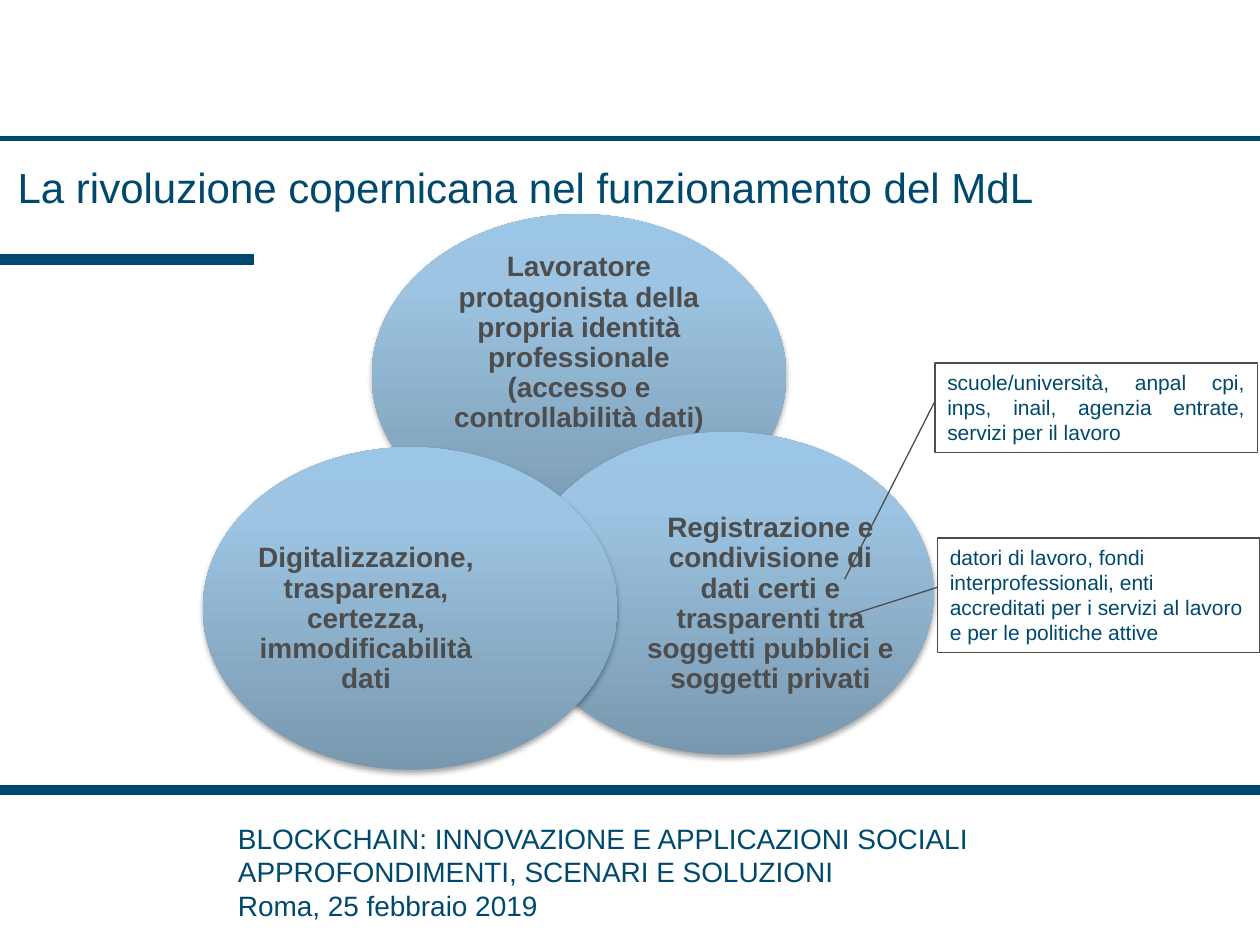
from dataclasses import dataclass

from lxml.etree import SubElement
from pptx import Presentation
from pptx.dml.color import RGBColor
from pptx.enum.shapes import MSO_CONNECTOR, MSO_SHAPE
from pptx.enum.text import MSO_ANCHOR as ANCHOR, MSO_AUTO_SIZE as AUTO_SIZE, PP_ALIGN as ALIGN
from pptx.oxml import parse_xml
from pptx.oxml.ns import nsdecls, qn
from pptx.util import Inches, Pt


@dataclass(frozen=True)
class Theme:
    font: str = "Arial"
    primary: str = "00496E"
    dark: str = "4D4D4D"
    gradient: tuple = ((0, "7998AF"), (80, "9DC5E3"), (100, "9CC6E6"))
    title_size: int = 24
    body_size: int = 16
    note_size: int = 12


THEME = Theme()
COLUMNS, ROWS = 100, 75
CELL = Inches(10) // COLUMNS
CIRCLE_SIZE = (32.9, 25.6)

CIRCLES = [
    ((29.5, 17), (33.9, 21.5, 24.1, 11.5),
     "Lavoratore protagonista della propria identità professionale "
     "(accesso e controllabilità dati)"),
    ((41.2, 34.3), (51.3, 40.9, 19.7, 14.1),
     "Registrazione e condivisione di dati certi e trasparenti tra "
     "soggetti pubblici e soggetti privati"),
    ((16.1, 35.5), (19.2, 42.1, 19.7, 14.1),
     "Digitalizzazione, trasparenza, certezza, immodificabilità dati"),
]
CALLOUTS = [
    ((74.2, 28.8, 25.6, 7.1), 2.42, ALIGN.JUSTIFY,
     "scuole/università, anpal cpi, inps, inail, agenzia entrate, servizi per il lavoro"),
    ((74.4, 42.7, 25.6, 9.1), 0.68, ALIGN.LEFT,
     "datori di lavoro, fondi interprofessionali, enti accreditati per i servizi "
     "al lavoro e per le politiche attive"),
]
FOOTER = [
    "BLOCKCHAIN: INNOVAZIONE E APPLICAZIONI SOCIALI",
    "APPROFONDIMENTI, SCENARI E SOLUZIONI",
    "Roma, 25 febbraio 2019",
]


def grid(*cells):
    return [round(cell * CELL) for cell in cells]


def color(value):
    return RGBColor.from_string(value)


def write(shape, *lines, size=THEME.body_size, ink=THEME.primary, bold=False,
          align=ALIGN.LEFT, anchor=ANCHOR.TOP, spacing=None, margin=None):
    frame = shape.text_frame
    frame.word_wrap = True
    frame.auto_size = AUTO_SIZE.NONE
    frame.vertical_anchor = anchor
    if margin is not None:
        frame.margin_left = frame.margin_right = margin
        frame.margin_top = frame.margin_bottom = margin
    for index, line in enumerate(lines):
        paragraph = frame.add_paragraph() if index else frame.paragraphs[0]
        paragraph.alignment = align
        paragraph.line_spacing = spacing
        run = paragraph.add_run()
        run.text = line
        run.font.name = THEME.font
        run.font.size = Pt(size)
        run.font.bold = bold
        run.font.color.rgb = color(ink)


def add_rule(slide, row, width):
    rule = slide.shapes.add_connector(
        MSO_CONNECTOR.STRAIGHT, *grid(0, row, COLUMNS, row))
    rule.line.color.rgb = color(THEME.primary)
    rule.line.width = Pt(width)
    SubElement(rule.element.spPr, qn("a:effectLst"))


def add_accent(slide, *box):
    accent = slide.shapes.add_shape(MSO_SHAPE.RECTANGLE, *grid(*box))
    accent.shadow.inherit = False
    accent.fill.solid()
    accent.fill.fore_color.rgb = accent.line.color.rgb = color(THEME.primary)
    accent.line.width = Pt(0.75)


def shade(shape):
    shape.line.fill.background()
    stops = "".join(
        f'<a:gs pos="{position * 1000}"><a:srgbClr val="{value}"/></a:gs>'
        for position, value in THEME.gradient)
    gradient = parse_xml(
        f'<a:gradFill {nsdecls("a")} rotWithShape="1"><a:gsLst>{stops}</a:gsLst>'
        '<a:lin ang="16200000" scaled="0"/></a:gradFill>')
    shadow = parse_xml(
        f'<a:effectLst {nsdecls("a")}><a:outerShdw blurRad="{Pt(3.1)}" dist="{Pt(1.8)}" '
        'dir="5400000" rotWithShape="0"><a:srgbClr val="000000"><a:alpha val="35000"/>'
        '</a:srgbClr></a:outerShdw></a:effectLst>')
    properties = shape.element.spPr
    properties.find(qn("a:prstGeom")).addnext(gradient)
    properties.append(shadow)


def add_circle(group, corner, label_box, text):
    circle = group.shapes.add_shape(MSO_SHAPE.OVAL, *grid(*corner, *CIRCLE_SIZE))
    shade(circle)
    label = group.shapes.add_textbox(*grid(*label_box))
    write(label, text, ink=THEME.dark, bold=True, align=ALIGN.CENTER,
          anchor=ANCHOR.MIDDLE, spacing=0.9, margin=0)


def add_callout(slide, box, tip, align, text):
    callout = slide.shapes.add_shape(MSO_SHAPE.LINE_CALLOUT_1, *grid(*box))
    callout.shadow.inherit = False
    callout.fill.background()
    callout.line.color.rgb = color(THEME.dark)
    callout.line.width = Pt(0.75)
    for index, share in enumerate((0.43, 0, tip, -0.28)):
        callout.adjustments[index] = share
    write(callout, text, size=THEME.note_size, align=align)


def add_title(slide, box, text):
    title = slide.shapes.title
    title.left, title.top, title.width, title.height = grid(*box)
    write(title, text, size=THEME.title_size)


def main():
    presentation = Presentation()
    presentation.slide_width, presentation.slide_height = grid(COLUMNS, ROWS)
    slide = presentation.slides.add_slide(presentation.slide_layouts[5])

    add_rule(slide, 11, 3)
    add_accent(slide, 0, 20.2, 20.1, 0.8)
    add_rule(slide, 62.7, 6)
    footer = slide.shapes.add_textbox(*grid(17.9, 64.7, 66.1, 9.1))
    write(footer, *FOOTER, align=ALIGN.JUSTIFY)

    add_title(slide, (0.4, 12.3, 99.2, 6.1),
              "La rivoluzione copernicana nel funzionamento del MdL")
    group = slide.shapes.add_group_shape()
    for circle in CIRCLES:
        add_circle(group, *circle)
    for callout in CALLOUTS:
        add_callout(slide, *callout)

    presentation.save("out.pptx")


if __name__ == "__main__":
    main()
